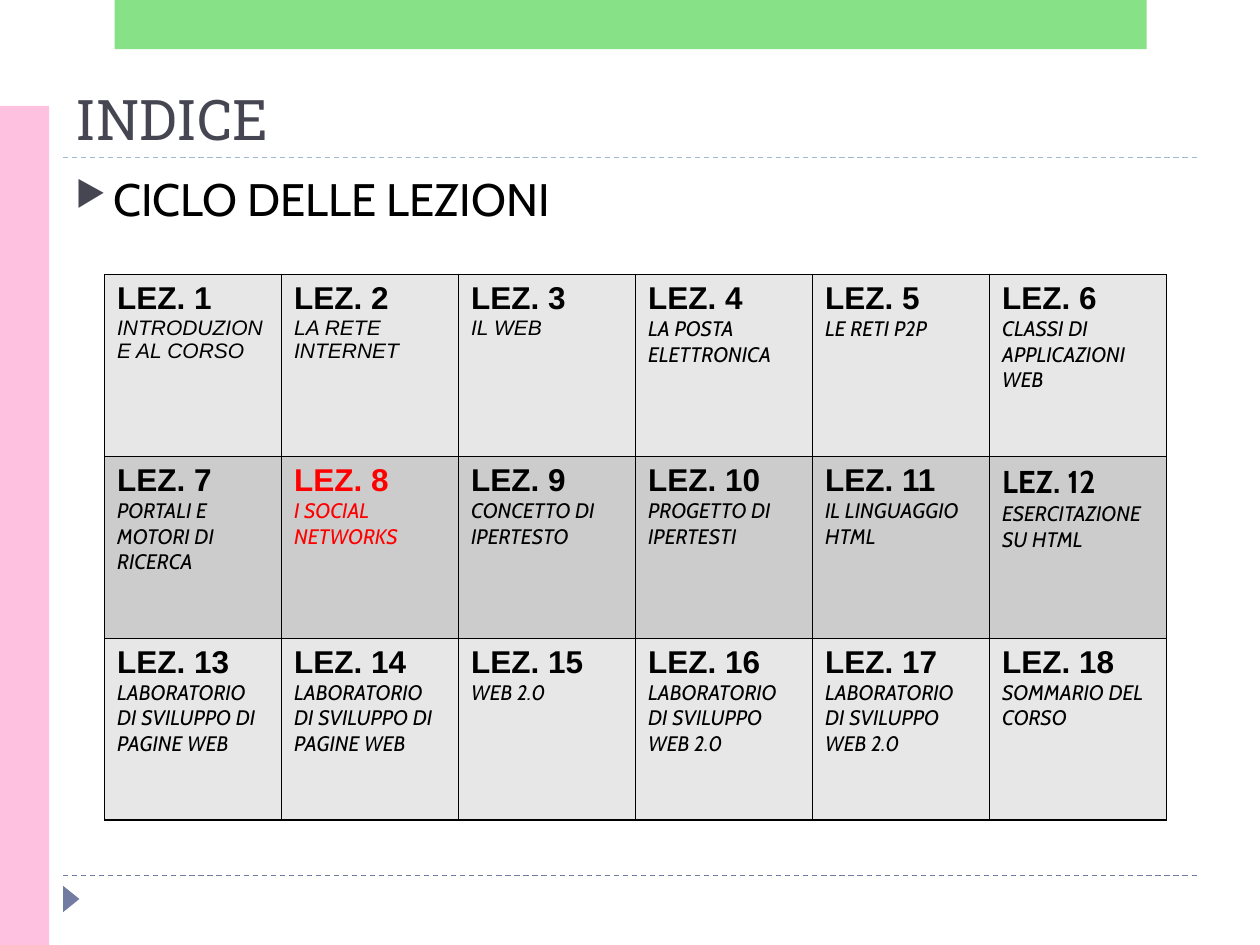
import dataclasses
import lxml.etree
import pptx
import pptx.dml.color
import pptx.enum.dml
import pptx.enum.shapes
import pptx.enum.text
import pptx.oxml.ns
import pptx.util

Inches = pptx.util.Inches
Pt = pptx.util.Pt
Shape = pptx.enum.shapes.MSO_SHAPE
Anchor = pptx.enum.text.MSO_ANCHOR
qn = pptx.oxml.ns.qn


@dataclasses.dataclass(frozen=True)
class Theme:
    ink: str = "000000"
    dark: str = "464653"
    blue: str = "727CA3"
    pale: str = "9FB8CD"
    pink: str = "FFC1E0"
    green: str = "62D862"
    red: str = "FF0000"
    light: str = "E7E7E7"
    grey: str = "CCCCCC"
    slab: str = "Roboto Slab"
    sans: str = "Cabin"
    plain: str = "Arial"
    title: int = 32
    body: int = 26
    head: int = 18
    note: int = 12


theme = Theme()


def rgb(code):
    return pptx.dml.color.RGBColor.from_string(code)


def style(para, face, size, color, bold=False, slant=False):
    font = para.font
    font.name, font.size = face, Pt(size)
    font.bold, font.italic = bold, slant
    font.color.rgb = rgb(color)


deck = pptx.Presentation()
deck.slide_width, deck.slide_height = Inches(10), Inches(7.5)
slide = deck.slides.add_slide(deck.slide_layouts[6])
shapes = slide.shapes

for y, color in [(6.95, theme.blue), (1.25, theme.pale)]:
    rule = shapes.add_connector(
        pptx.enum.shapes.MSO_CONNECTOR.STRAIGHT,
        Inches(0.5), Inches(y), Inches(9.5), Inches(y))
    rule.line.color.rgb = rgb(color)
    rule.line.width = Pt(0.75)
    rule.line.dash_style = pptx.enum.dml.MSO_LINE.DASH
    lxml.etree.SubElement(rule._element.spPr, qn("a:effectLst"))

for kind, box, color, turn, alpha in [
    (Shape.ISOSCELES_TRIANGLE, (0.46, 7.07, 0.21, 0.13), theme.blue, 90, 100),
    (Shape.RECTANGLE, (0, 0.84, 0.39, 6.66), theme.pink, 0, 100),
    (Shape.RECTANGLE, (0.91, 0, 8.19, 0.39), theme.green, 0, 76),
]:
    mark = shapes.add_shape(kind, *map(Inches, box))
    mark.shadow.inherit = False
    mark.rotation = turn
    mark.fill.solid()
    mark.fill.fore_color.rgb = rgb(color)
    mark.line.fill.background()
    if alpha < 100:
        tint = mark._element.spPr.find(".//" + qn("a:srgbClr"))
        lxml.etree.SubElement(tint, qn("a:alpha"), val=str(alpha * 1000))

for text, top, high, anchor, face, size, color, mark in [
    ("INDICE", 0.55, 0.7, Anchor.BOTTOM, theme.slab, theme.title,
     theme.dark, ""),
    ("CICLO DELLE LEZIONI", 1.31, 0.79, Anchor.TOP, theme.sans, theme.body,
     theme.ink, "▶"),
]:
    box = shapes.add_textbox(Inches(0.5), Inches(top), Inches(9), Inches(high))
    frame = box.text_frame
    frame.word_wrap = True
    frame.vertical_anchor = anchor
    para = frame.paragraphs[0]
    para.text = text
    if mark:
        props = para._p.get_or_add_pPr()
        props.set("marL", str(Inches(0.3)))
        props.set("indent", str(Inches(-0.3)))
        tint = lxml.etree.SubElement(props, qn("a:buClr"))
        lxml.etree.SubElement(tint, qn("a:srgbClr"), val=theme.dark)
        lxml.etree.SubElement(props, qn("a:buSzPct"), val="76000")
        lxml.etree.SubElement(props, qn("a:buChar"), char=mark)
    style(para, face, size, color)

topics = [
    ["INTRODUZIONE AL CORSO", "LA RETE INTERNET", "IL WEB",
     "LA POSTA ELETTRONICA", "LE RETI P2P", "CLASSI DI APPLICAZIONI WEB"],
    ["PORTALI E MOTORI DI RICERCA", "I SOCIAL NETWORKS",
     "CONCETTO DI IPERTESTO", "PROGETTO DI IPERTESTI",
     "IL LINGUAGGIO HTML", "ESERCITAZIONE SU HTML"],
    ["LABORATORIO DI SVILUPPO DI PAGINE WEB",
     "LABORATORIO DI SVILUPPO DI PAGINE WEB", "WEB 2.0",
     "LABORATORIO DI SVILUPPO\vWEB 2.0",
     "LABORATORIO DI SVILUPPO\vWEB 2.0", "SOMMARIO DEL CORSO"],
]
rows, cols = len(topics), len(topics[0])
table = shapes.add_table(rows, cols, Inches(0.83), Inches(2.18),
                         Inches(8.43), Inches(4.33)).table
for r, line in enumerate(topics):
    for c, topic in enumerate(line):
        num = r * cols + c + 1
        cell = table.cell(r, c)
        props = cell._tc.get_or_add_tcPr()
        for side in ("lnL", "lnR", "lnT", "lnB"):
            edge = lxml.etree.SubElement(props, qn("a:" + side),
                                         w=str(Pt(1)))
            fill = lxml.etree.SubElement(edge, qn("a:solidFill"))
            lxml.etree.SubElement(fill, qn("a:srgbClr"), val=theme.ink)
        cell.fill.solid()
        cell.fill.fore_color.rgb = rgb(theme.grey if r % 2 else theme.light)
        color = theme.red if num == 8 else theme.ink
        head = cell.text_frame.paragraphs[0]
        head.text = f"LEZ. {num}"
        style(head, theme.sans if num == 12 else theme.plain,
              theme.head, color, bold=True)
        note = cell.text_frame.add_paragraph()
        note.text = topic
        style(note, theme.plain if num <= 3 else theme.sans,
              theme.note, color, slant=True)

deck.save("out.pptx")
